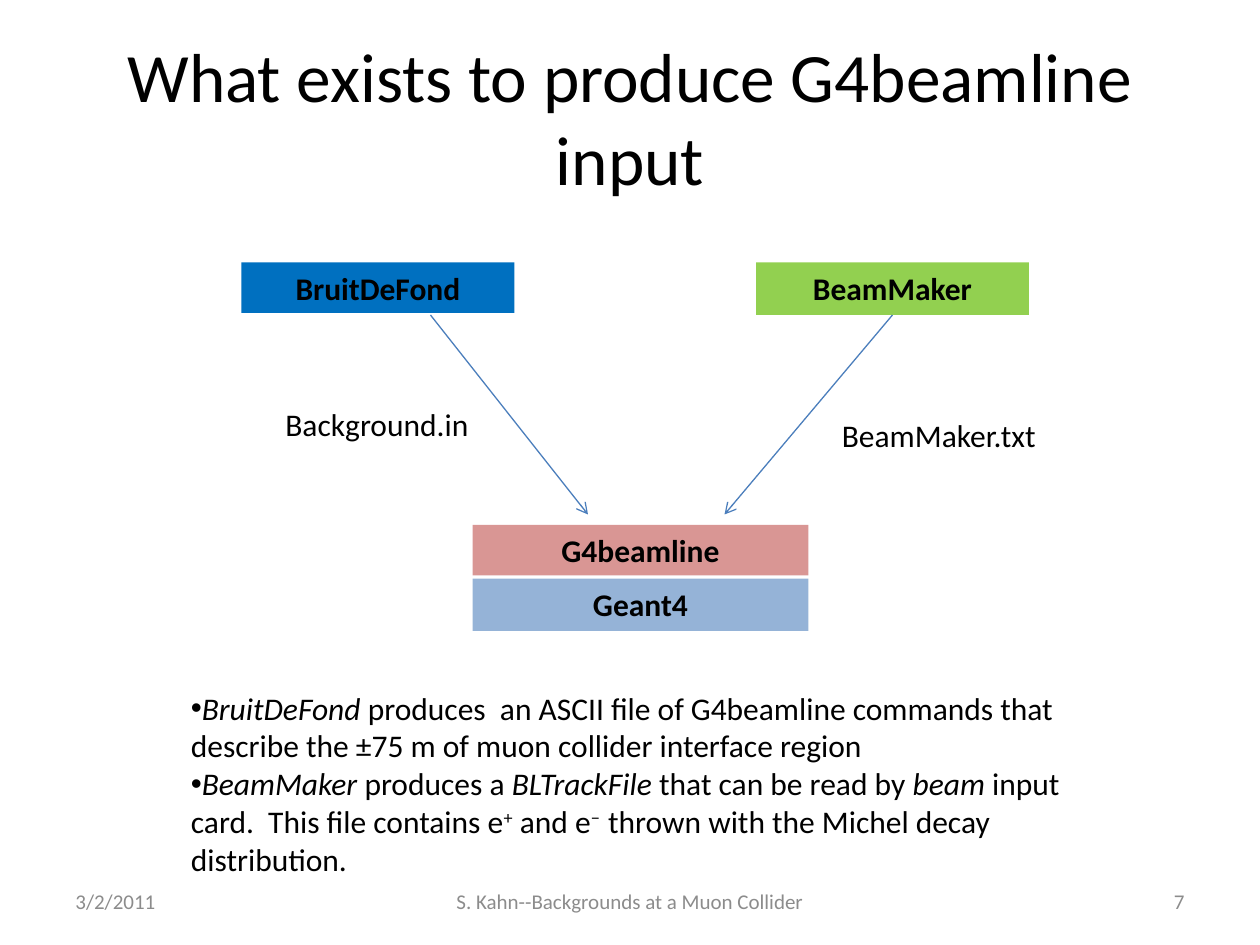
from dataclasses import dataclass

from lxml import etree
from pptx import Presentation
from pptx.dml.color import RGBColor
from pptx.enum.shapes import MSO_CONNECTOR, MSO_SHAPE
from pptx.enum.text import MSO_ANCHOR, MSO_AUTO_SIZE, PP_ALIGN
from pptx.oxml.ns import qn
from pptx.util import Inches, Pt

LEFT, CENTER, RIGHT = PP_ALIGN.LEFT, PP_ALIGN.CENTER, PP_ALIGN.RIGHT
TOP, MIDDLE = MSO_ANCHOR.TOP, MSO_ANCHOR.MIDDLE
NO_AUTOFIT = MSO_AUTO_SIZE.NONE
RECTANGLE, STRAIGHT = MSO_SHAPE.RECTANGLE, MSO_CONNECTOR.STRAIGHT
TITLE_ONLY = 5
GRID_PER_INCH = 12
SLIDE_COLUMNS, SLIDE_ROWS = 120, 90


@dataclass(frozen=True)
class Theme:
    """Colours, font and type sizes of the slide."""

    font: str = "Calibri"
    text: str = "000000"
    muted: str = "8C8C8C"
    arrow: str = "4B7EBC"
    background_program: str = "0070C0"
    beam_program: str = "92D050"
    beamline: str = "D99694"
    toolkit: str = "95B3D7"
    title_size: float = 39.6
    body_size: float = 18
    footer_size: float = 12
    arrow_width: float = 0.75


THEME = Theme()


def grid(*cells):
    """Convert grid columns or rows to slide lengths."""
    return [Inches(cell / GRID_PER_INCH) for cell in cells]


def add_run(paragraph, text, size=THEME.body_size, color=THEME.text,
            bold=False, italic=False, superscript=False):
    """Append one formatted run to a paragraph."""
    run = paragraph.add_run()
    run.text = text
    font = run.font
    font.name, font.size = THEME.font, Pt(size)
    font.bold, font.italic = bold, italic
    font.color.rgb = RGBColor.from_string(color)
    if superscript:
        run._r.get_or_add_rPr().set("baseline", "30000")


def write_text(shape, text, align=LEFT, anchor=TOP, **run_format):
    """Write a single paragraph into a shape."""
    frame = shape.text_frame
    frame.word_wrap, frame.auto_size = True, NO_AUTOFIT
    frame.vertical_anchor = anchor
    paragraph = frame.paragraphs[0]
    paragraph.alignment = align
    add_run(paragraph, text, **run_format)


def add_title(slide, text, *box):
    """Place and fill the title placeholder."""
    title = slide.shapes.title
    title.left, title.top, title.width, title.height = grid(*box)
    write_text(title, text, align=CENTER, anchor=MIDDLE, size=THEME.title_size)


def add_label(slide, text, *box, **text_format):
    """Add a plain text box."""
    write_text(slide.shapes.add_textbox(*grid(*box)), text, **text_format)


def add_program(slide, text, fill, *box):
    """Add a filled box that names a program."""
    shape = slide.shapes.add_shape(RECTANGLE, *grid(*box))
    shape.shadow.inherit = False
    shape.fill.solid()
    shape.fill.fore_color.rgb = RGBColor.from_string(fill)
    shape.line.fill.background()
    write_text(shape, text, align=CENTER, bold=True)


def add_arrow(slide, *ends):
    """Add a straight line with an open arrowhead at its end."""
    connector = slide.shapes.add_connector(STRAIGHT, *grid(*ends))
    connector.line.width = Pt(THEME.arrow_width)
    connector.line.color.rgb = RGBColor.from_string(THEME.arrow)
    line = connector.line._get_or_add_ln()
    etree.SubElement(line, qn("a:tailEnd"), type="arrow")
    etree.SubElement(connector._element.spPr, qn("a:effectLst"))


def add_bullets(slide, items, *box):
    """Add bulleted paragraphs, each a list of (text, format) runs."""
    frame = slide.shapes.add_textbox(*grid(*box)).text_frame
    frame.word_wrap = True
    for index, runs in enumerate(items):
        paragraph = frame.add_paragraph() if index else frame.paragraphs[0]
        properties = paragraph._p.get_or_add_pPr()
        etree.SubElement(properties, qn("a:buFont"), typeface="Arial")
        etree.SubElement(properties, qn("a:buChar"), char="•")
        for text, run_format in runs:
            add_run(paragraph, text, **run_format)


def add_flow(slide):
    """Draw the programs, the files they write and the arrows."""
    add_program(slide, "BruitDeFond", THEME.background_program, 23, 25, 26, 4.8)
    add_program(slide, "BeamMaker", THEME.beam_program, 72, 25, 26, 5)
    add_program(slide, "G4beamline", THEME.beamline, 45, 50, 32, 4.8)
    add_program(slide, "Geant4", THEME.toolkit, 45, 55.1, 32, 5)
    add_arrow(slide, 41, 30, 56, 49)
    add_arrow(slide, 85, 30, 69, 49)
    add_label(slide, "Background.in", 26, 38, 21, 5)
    add_label(slide, "BeamMaker.txt", 79, 39, 24, 5)


def add_footer(slide):
    """Add the date, the talk and the page number."""
    footer = (("3/2/2011", LEFT, 6, 28), ("7", RIGHT, 86, 28),
              ("S. Kahn--Backgrounds at a Muon Collider", CENTER, 41, 38))
    for text, align, column, width in footer:
        add_label(slide, text, column, 83.4, width, 4.8, align=align,
                  anchor=MIDDLE, size=THEME.footer_size, color=THEME.muted)


def main():
    """Build the slide and save it."""
    presentation = Presentation()
    presentation.slide_width, presentation.slide_height = grid(
        SLIDE_COLUMNS, SLIDE_ROWS)
    slide = presentation.slides.add_slide(
        presentation.slide_layouts[TITLE_ONLY])
    add_title(slide, "What exists to produce G4beamline input", 6, 3.6, 108, 15)
    add_footer(slide)
    add_flow(slide)
    plain, italic, raised = {}, {"italic": True}, {"superscript": True}
    add_bullets(slide, [
        [("BruitDeFond", italic),
         (" produces  an ASCII file of G4beamline commands that describe "
          "the ±75 m of muon collider interface region", plain)],
        [("BeamMaker ", italic), ("produces a ", plain),
         ("BLTrackFile ", italic), ("that can be read by ", plain),
         ("beam", italic), (" input card.  This file contains e", plain),
         ("+", raised), (" and e", plain), ("−  ", raised),
         ("thrown with the Michel decay distribution.", plain)],
    ], 17, 65, 87, 19.4)
    presentation.save("out.pptx")


if __name__ == "__main__":
    main()
